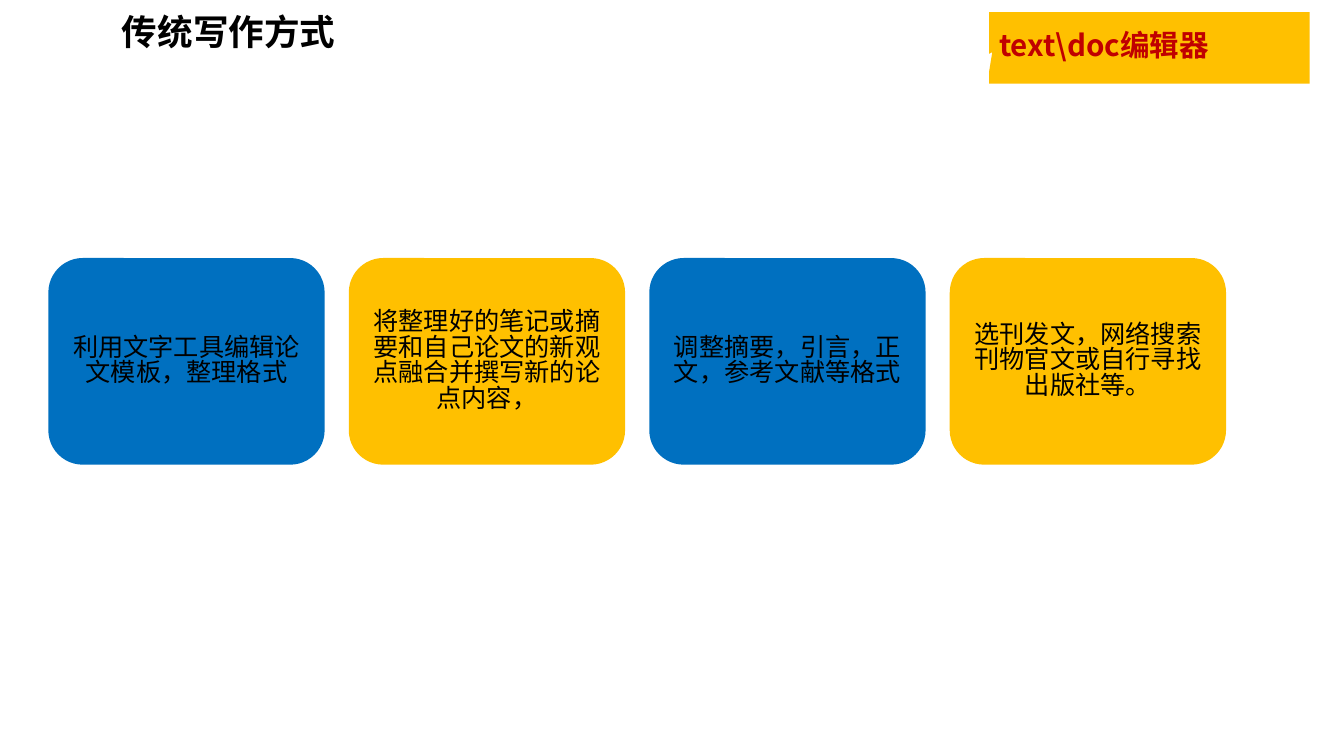
from dataclasses import dataclass

from lxml import etree
from pptx import Presentation
from pptx import util as u
from pptx.dml.color import RGBColor
from pptx.enum import shapes, text
from pptx.oxml import ns

# Content
TITLE = "传统写作方式"
TOOL = "text\\doc编辑器"
STEPS = [
    "利用文字工具编辑论文模板，整理格式",
    "将整理好的笔记或摘要和自己论文的新观点融合并撰写新的论点内容，",
    "调整摘要，引言，正文，参考文献等格式",
    "选刊发文，网络搜索刊物官文或自行寻找出版社等。",
]


@dataclass(frozen=True)
class Theme:
    font: str = "Noto Sans CJK SC"
    ink: str = "000000"
    red: str = "C00000"
    blue: str = "0070C0"
    amber: str = "FFC000"
    title_size: float = 25.4
    tool_size: float = 21.1
    step_size: float = 18
    line_spacing: float = 0.84


THEME = Theme()

# Layout in inches
TITLE_BOX = (1.11, 0.12, 5.44, 0.53)
TOOL_BOX = (9.81, 0.12, 3.18, 0.71)
STEP_LEFT, STEP_TOP, STEP_WIDTH, STEP_HEIGHT = 0.48, 2.56, 2.74, 2.05
STEP_PITCH = 2.98


def write(shape, words, size, color=THEME.ink, bold=False,
          align=text.PP_ALIGN.LEFT, anchor=text.MSO_ANCHOR.MIDDLE):
    """Put one formatted paragraph into a shape."""
    frame = shape.text_frame
    frame.word_wrap = True
    frame.auto_size = text.MSO_AUTO_SIZE.NONE
    frame.vertical_anchor = anchor
    paragraph = frame.paragraphs[0]
    paragraph.alignment = align
    paragraph.line_spacing = THEME.line_spacing
    run = paragraph.add_run()
    run.text = words
    run.font.name = THEME.font
    run.font.size = u.Pt(size)
    run.font.bold = bold
    run.font.color.rgb = RGBColor.from_string(color)
    east_asian = etree.SubElement(run.font._element, ns.qn("a:ea"))
    east_asian.set("typeface", THEME.font)


def add_block(slide, kind, box, fill):
    """Add a flat filled shape without outline."""
    shape = slide.shapes.add_shape(kind, *map(u.Inches, box))
    shape.shadow.inherit = False
    shape.fill.solid()
    shape.fill.fore_color.rgb = RGBColor.from_string(fill)
    shape.line.fill.background()
    return shape


def main():
    presentation = Presentation()
    presentation.slide_width = u.Inches(13.33)
    presentation.slide_height = u.Inches(7.5)
    slide = presentation.slides.add_slide(presentation.slide_layouts[5])

    # Title
    title = slide.shapes.title
    title.left, title.top, title.width, title.height = map(u.Inches, TITLE_BOX)
    write(title, TITLE, THEME.title_size, bold=True, anchor=text.MSO_ANCHOR.TOP)

    # Tool callout
    callout = add_block(slide, shapes.MSO_SHAPE.RECTANGULAR_CALLOUT, TOOL_BOX, THEME.amber)
    callout.adjustments[0] = -0.49
    callout.adjustments[1] = 0.06
    write(callout, TOOL, THEME.tool_size, color=THEME.red, bold=True)

    # Row of steps in alternating colours
    for index, step in enumerate(STEPS):
        box = (STEP_LEFT + index * STEP_PITCH, STEP_TOP, STEP_WIDTH, STEP_HEIGHT)
        fill = THEME.amber if index % 2 else THEME.blue
        card = add_block(slide, shapes.MSO_SHAPE.ROUNDED_RECTANGLE, box, fill)
        write(card, step, THEME.step_size, align=text.PP_ALIGN.CENTER)

    presentation.save("out.pptx")


if __name__ == "__main__":
    main()
